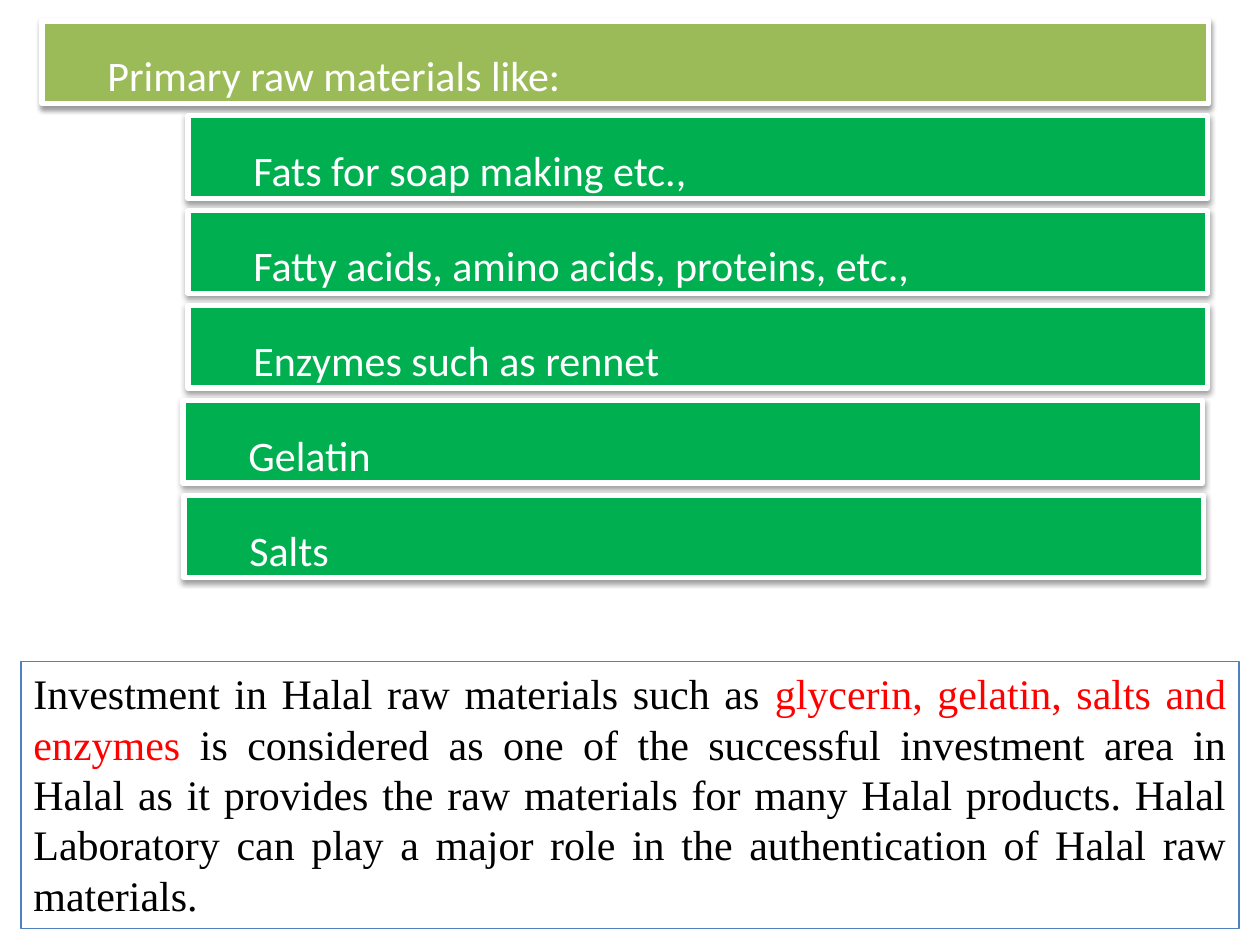
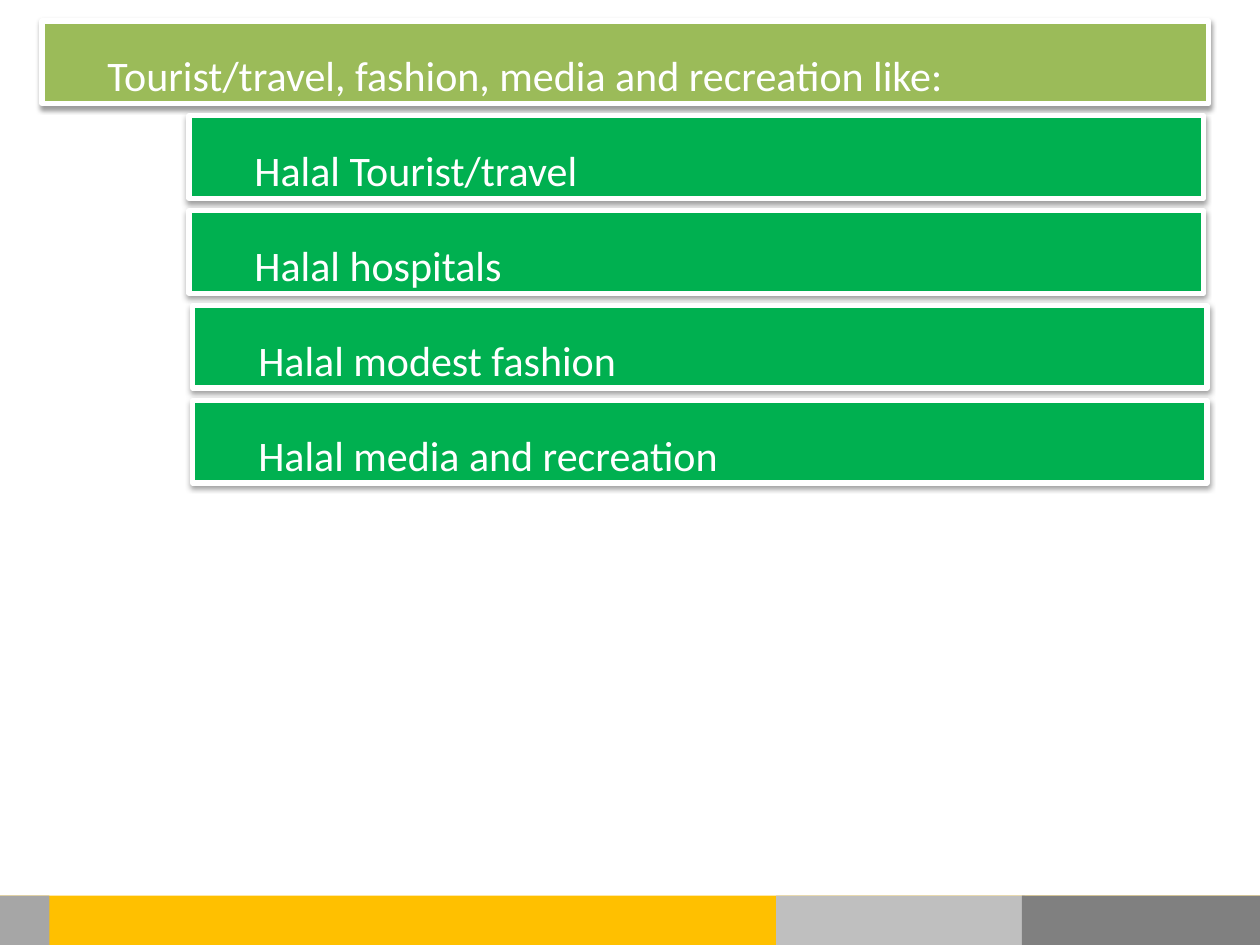
"""Build two slides of Halal investment areas with stacked bars."""
from lxml import etree
from pptx import Presentation
from pptx.dml.color import RGBColor
from pptx.enum.shapes import MSO_SHAPE
from pptx.enum.text import MSO_ANCHOR, PP_ALIGN
from pptx.oxml.ns import qn
from pptx.util import Pt

RECT = MSO_SHAPE.RECTANGLE
MIDDLE = MSO_ANCHOR.MIDDLE
JUSTIFY = PP_ALIGN.JUSTIFY

COLORS = {
    "header": "9BBB59", "item": "00B050", "white": "FFFFFF", "black": "000000",
    "accent": "FF0000", "border": "4F81BD", "amber": "FFC000",
    "light": "BFBFBF", "mid": "A6A6A6", "dark": "808080",
}
COLORS = {name: RGBColor.from_string(value) for name, value in COLORS.items()}

BAR_TOP, BAR_PITCH, BAR_HEIGHT = 12, 54.2, 47.2
HEADER_LEFT, HEADER_WIDTH = 24, 666.7


def add_block(s, left, top, width, height, color):
    sp = s.shapes.add_shape(RECT, Pt(left), Pt(top), Pt(width), Pt(height))
    sp.shadow.inherit = False
    sp.fill.solid()
    sp.fill.fore_color.rgb = COLORS[color]
    sp.line.fill.background()
    return sp


def add_bar(s, row, left, width, text, color):
    sp = add_block(s, left, BAR_TOP + row * BAR_PITCH, width, BAR_HEIGHT, color)
    sp.line.color.rgb = COLORS["white"]
    sp.line.width = Pt(3)
    effects = sp._element.spPr.find(qn("a:effectLst"))
    shadow = etree.SubElement(effects, qn("a:outerShdw"), blurRad=str(Pt(3.1)),
                              dist=str(Pt(1.6)), dir="5400000", rotWithShape="0")
    shade = etree.SubElement(shadow, qn("a:srgbClr"), val=str(COLORS["black"]))
    etree.SubElement(shade, qn("a:alpha"), val="38000")
    tf = sp.text_frame
    tf.word_wrap = True
    tf.vertical_anchor = MIDDLE
    tf.margin_left = Pt(37.4)
    tf.margin_top = tf.margin_right = tf.margin_bottom = Pt(3.6)
    tf.text = text
    p = tf.paragraphs[0]
    p.alignment = JUSTIFY
    p.line_spacing = 1.5
    font = p.runs[0].font
    font.name = "Calibri"
    font.size = Pt(24)
    font.color.rgb = COLORS["white"]


prs = Presentation()
prs.slide_width, prs.slide_height = Pt(720), Pt(540)

pages = [
    ("Primary raw materials like:", 582.6, [
        ("Fats for soap making etc.,", 107.4),
        ("Fatty acids, amino acids, proteins, etc.,", 107.4),
        ("Enzymes such as rennet", 107.4),
        ("Gelatin", 104.6),
        ("Salts", 105.1),
    ]),
    ("Tourist/travel, fashion, media and recreation like:", 579.6, [
        ("Halal Tourist/travel", 108),
        ("Halal hospitals", 108),
        ("Halal modest fashion", 110.2),
        ("Halal media and recreation", 110.2),
    ]),
]
slides = []
for header, item_width, items in pages:
    s = prs.slides.add_slide(prs.slide_layouts[6])
    slides.append(s)
    add_bar(s, 0, HEADER_LEFT, HEADER_WIDTH, header, "header")
    for row, (text, left) in enumerate(items, start=1):
        add_bar(s, row, left, item_width, text, "item")

materials_slide, travel_slide = slides

note = materials_slide.shapes.add_textbox(Pt(12), Pt(378), Pt(696), Pt(152.6))
note.line.color.rgb = COLORS["border"]
note.line.width = Pt(0.75)
tf = note.text_frame
tf.word_wrap = True
p = tf.paragraphs[0]
p.alignment = JUSTIFY
for text, color in [
    ("Investment in Halal raw materials such as ", "black"),
    ("glycerin, gelatin, salts and enzymes ", "accent"),
    ("is considered as one of the successful investment area in Halal as it "
     "provides the raw materials for many Halal products. Halal Laboratory can "
     "play a major role in the authentication of Halal raw materials.", "black"),
]:
    r = p.add_run()
    r.text = text
    r.font.name = "Times New Roman"
    r.font.size = Pt(24)
    r.font.color.rgb = COLORS[color]

for left, right, color in [(0, 720, "amber"), (443.5, 585.5, "light"),
                           (584, 720, "dark"), (0, 28.2, "mid")]:
    add_block(travel_slide, left, 511.8, right - left, 28.2, color)

prs.save("out.pptx")
